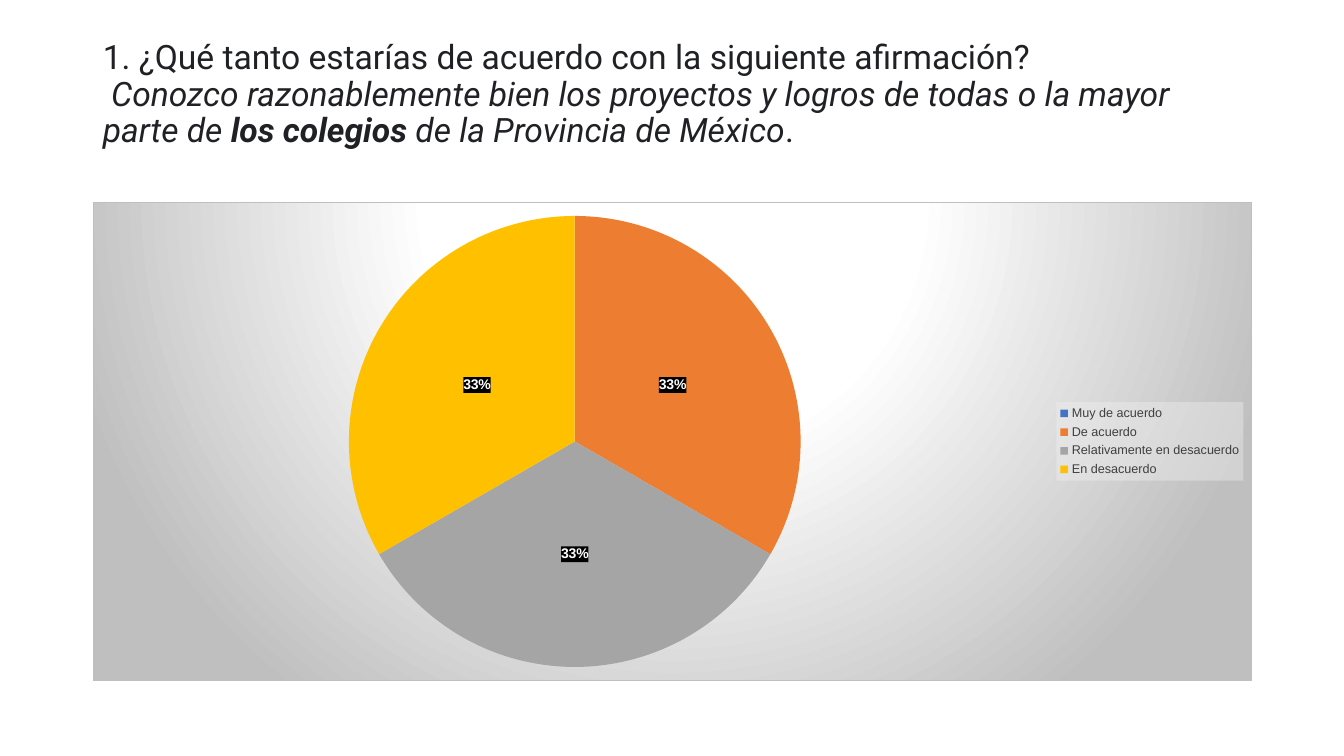
from lxml import etree
from pptx import Presentation
from pptx.chart.data import CategoryChartData
from pptx.dml.color import RGBColor
from pptx.enum import chart as charts, text
from pptx.util import Inches, Pt

COLORS = {
    "title": "202124",
    "text": "000000",
    "legend": "404040",
    "legend_box": "F2F2F2",
    "label": "FFFFFF",
    "center": "FFFFFF",
    "edge": "BFBFBF",
}
ANSWERS = [
    ("Muy de acuerdo", 0, "4472C4"),
    ("De acuerdo", 33, "ED7D31"),
    ("Relativamente en desacuerdo", 33, "A5A5A5"),
    ("En desacuerdo", 33, "FFC000"),
]
QUESTION = "1. ¿Qué tanto estarías de acuerdo con la siguiente afirmación?"
STATEMENT = [
    (" Conozco razonablemente bien los proyectos y logros de todas o la mayor parte de ", True, False),
    ("los colegios ", True, True),
    ("de la Provincia de México", True, True and False),
    (".", False, False),
]
NAMESPACES = {
    "c": "http://schemas.openxmlformats.org/drawingml/2006/chart",
    "a": "http://schemas.openxmlformats.org/drawingml/2006/main",
}


def style_font(font, name, size, color, bold=False, italic=False):
    font.name = name
    font.size = Pt(size)
    font.color.rgb = RGBColor.from_string(COLORS[color])
    font.bold = bold
    font.italic = italic


def add_span(para, words, italic=False, bold=False):
    span = para.add_run()
    span.text = words
    style_font(span.font, "Roboto", 24, "title", bold, italic)


def fill_title(title):
    title.left, title.top = Inches(0.92), Inches(0.4)
    title.width, title.height = Inches(11.5), Inches(1.45)
    frame = title.text_frame
    frame.word_wrap = True
    frame.auto_size = text.MSO_AUTO_SIZE.NONE
    frame.vertical_anchor = text.MSO_ANCHOR.MIDDLE
    frame.margin_bottom = Inches(0.41)
    para = frame.paragraphs[0]
    para.alignment = text.PP_ALIGN.LEFT
    para.line_spacing = 0.9
    add_span(para, QUESTION)
    para.add_line_break()
    for words, italic, bold in STATEMENT:
        add_span(para, words, italic, bold)


def set_background(chart, parent, content):
    text_style = chart.element.find(f"{parent}c:txPr", NAMESPACES)
    text_style.addprevious(etree.fromstring(
        f'<c:spPr xmlns:c="{NAMESPACES["c"]}" xmlns:a="{NAMESPACES["a"]}">{content}</c:spPr>'))


def solid(color, alpha):
    return (f'<a:solidFill><a:srgbClr val="{color}"><a:alpha val="{alpha * 1000}"/>'
            '</a:srgbClr></a:solidFill><a:ln><a:noFill/></a:ln>')


def radial_gradient():
    stops = "".join(
        f'<a:gs pos="{position * 1000}"><a:srgbClr val="{COLORS[color]}"/></a:gs>'
        for position, color in [(0, "center"), (39, "center"), (100, "edge")])
    return (f'<a:gradFill><a:gsLst>{stops}</a:gsLst><a:path path="circle">'
            '<a:fillToRect l="50000" t="-80000" r="50000" b="180000"/></a:path></a:gradFill>'
            f'<a:ln w="9525"><a:solidFill><a:srgbClr val="{COLORS["edge"]}"/></a:solidFill></a:ln>')


def add_answer_pie(slide):
    data = CategoryChartData()
    data.categories = [answer for answer, _, _ in ANSWERS]
    data.add_series("Series 1", [value for _, value, _ in ANSWERS])
    chart = slide.shapes.add_chart(
        charts.XL_CHART_TYPE.PIE, Inches(0.92), Inches(2), Inches(11.5), Inches(4.76), data).chart
    chart.has_title = False
    style_font(chart.font, "Arial", 10, "text")

    chart.has_legend = True
    chart.legend.position = charts.XL_LEGEND_POSITION.RIGHT
    chart.legend.include_in_layout = False
    style_font(chart.legend.font, "Arial", 9, "legend")

    plot = chart.plots[0]
    plot.vary_by_categories = True
    series = plot.series[0]
    for index, (_, _, color) in enumerate(ANSWERS):
        fill = series.points[index].format.fill
        fill.solid()
        fill.fore_color.rgb = RGBColor.from_string(color)

    labels = series.data_labels
    labels.show_percentage = True
    labels.show_value = False
    labels.number_format = "0%;;"
    labels.number_format_is_linked = False
    labels.position = charts.XL_LABEL_POSITION.CENTER
    style_font(labels.font, "Arial", 10, "label", bold=True)

    set_background(chart, "", radial_gradient())
    set_background(chart, "c:chart/c:legend/", solid(COLORS["legend_box"], 39))
    set_background(chart, ".//c:ser/c:dLbls/", solid(COLORS["text"], 75))


def main():
    deck = Presentation()
    deck.slide_width, deck.slide_height = Inches(13.33), Inches(7.5)
    slide = deck.slides.add_slide(deck.slide_layouts[5])
    fill_title(slide.shapes.title)
    add_answer_pie(slide)
    deck.save("out.pptx")


if __name__ == "__main__":
    main()
